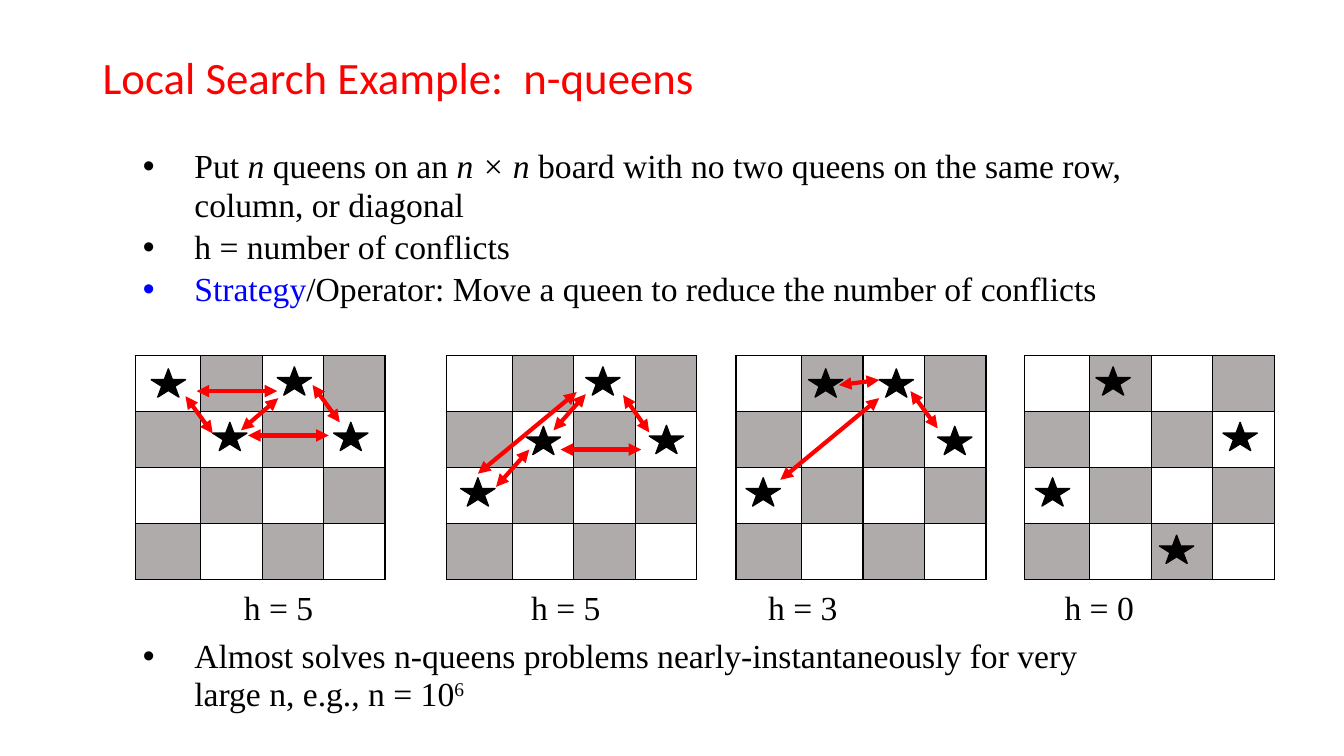
from dataclasses import dataclass

from lxml import etree
from pptx import Presentation
from pptx.dml.color import RGBColor
from pptx.enum.shapes import MSO_CONNECTOR, MSO_SHAPE
from pptx.enum.text import MSO_ANCHOR
from pptx.oxml.ns import qn
from pptx.util import Inches, Pt

STAR = MSO_SHAPE.STAR_5_POINT
LINE = MSO_CONNECTOR.STRAIGHT
MIDDLE = MSO_ANCHOR.MIDDLE


@dataclass(frozen=True)
class Theme:
    """Colours, fonts and sizes of the slide."""
    black: str = "000000"
    white: str = "FFFFFF"
    gray: str = "AFABAB"
    red: str = "FF0000"
    blue: str = "0000FF"
    head: str = "Calibri"
    body: str = "Times New Roman"
    big: int = 32
    text: int = 24
    thin: int = 1
    thick: int = 3


THEME = Theme()
TOP = [
    [("Put ", ""), ("n", "italic"), (" queens on an ", ""), ("n × n", "italic"),
     (" board with no two queens on the same row, column, or diagonal", "")],
    [("h = number of conflicts", "")],
    [("Strategy", "blue"),
     ("/Operator: Move a queen to reduce the number of conflicts", "")],
]
END = [[("Almost solves n-queens problems nearly-instantaneously "
         "for very large n, e.g., n = 10", ""), ("6", "super")]]
BOARDS = [
    (1.34, "h = 5", 1.08,
     [(.16, .13), (1.41, .11), (.77, .66), (1.97, .66)],
     [(1.05, .74, 1.42, .42), (1.12, .79, 1.92, .79), (.61, .35, 1.41, .35),
      (.5, .4, .77, .77), (1.76, .29, 2.03, .66)]),
    (4.43, "h = 5", .84,
     [(.14, 1.21), (.79, .7), (1.38, .11), (2.01, .69)],
     [(1.75, .39, 2.01, .76), (1.38, .38, 1.06, .74), (.82, .93, .49, 1.3),
      (.31, 1.17, 1.29, .36), (1.13, .93, 1.93, .93)]),
    (7.3, "h = 3", .32,
     [(.1, 1.21), (.72, .13), (1.42, .13), (2, .7)],
     [(1.73, .35, 2, .72), (1.02, .29, 1.42, .24), (.44, 1.23, 1.42, .42)]),
    (10.16, "h = 0", .4,
     [(.11, 1.21), (.71, .11), (1.34, 1.78), (1.97, .66)], []),
]


def rgb(code):
    """Turn a hex code into a colour."""
    return RGBColor.from_string(code)


def sub(node, tag, **attrs):
    """Add a drawing element below a node."""
    return etree.SubElement(node, qn("a:" + tag), attrs)


def style(para, face, size, color):
    """Set the font of a paragraph."""
    font = para.font
    font.name, font.size = face, Pt(size)
    font.color.rgb = rgb(color)


def frame(slide, x, y, w, h):
    """Add a wrapping text box and return its frame."""
    text = slide.shapes.add_textbox(
        Inches(x), Inches(y), Inches(w), Inches(h)).text_frame
    text.word_wrap = True
    return text


def title(slide, x, y, w, h):
    """Place the slide title."""
    text = frame(slide, x, y, w, h)
    text.vertical_anchor = MIDDLE
    para = text.paragraphs[0]
    para.text = "Local Search Example:  n-queens"
    para.line_spacing = .9
    style(para, THEME.head, THEME.big, THEME.red)


def bullets(slide, x, y, w, h, items):
    """Place a bulleted list of styled runs."""
    text = frame(slide, x, y, w, h)
    for i, item in enumerate(items):
        para = text.add_paragraph() if i else text.paragraphs[0]
        props = para._p.get_or_add_pPr()
        props.set("marL", str(Inches(.51)))
        props.set("indent", str(-Inches(.51)))
        mark = THEME.blue if item[0][1] == "blue" else THEME.black
        sub(sub(props, "buClr"), "srgbClr", val=mark)
        sub(props, "buFont", typeface="Arial")
        sub(props, "buChar", char="•")
        style(para, THEME.body, THEME.text, THEME.black)
        para.line_spacing = .95
        if i:
            para.space_before = Pt(2.7)
        for words, kind in item:
            run = para.add_run()
            run.text = words
            if kind == "italic":
                run.font.italic = True
            elif kind == "blue":
                run.font.color.rgb = rgb(THEME.blue)
            elif kind == "super":
                run._r.get_or_add_rPr().set("baseline", "30000")


def border(cell):
    """Draw a thin line on each side of a cell."""
    props = cell._tc.get_or_add_tcPr()
    for i, side in enumerate(("lnL", "lnR", "lnT", "lnB")):
        line = etree.Element(qn("a:" + side), {"w": str(Pt(THEME.thin))})
        sub(sub(line, "solidFill"), "srgbClr", val=THEME.black)
        props.insert(i, line)


def grid(slide, x, y, w, h):
    """Place an empty four by four board."""
    table = slide.shapes.add_table(
        4, 4, Inches(x), Inches(y), Inches(w), Inches(h)).table
    table.first_row = table.horz_banding = False
    for i, col in enumerate(table.columns):
        col.width = Inches(.61 if i else w - 3 * .61)
    for r in range(4):
        table.rows[r].height = Inches(h / 4)
        for c in range(4):
            cell = table.cell(r, c)
            cell.fill.solid()
            cell.fill.fore_color.rgb = rgb(
                THEME.gray if (r + c) % 2 else THEME.white)
            border(cell)


def queen(slide, x, y):
    """Place one queen."""
    star = slide.shapes.add_shape(
        STAR, Inches(x), Inches(y), Inches(.34), Inches(.28))
    star.shadow.inherit = False
    star.fill.solid()
    star.fill.fore_color.rgb = rgb(THEME.black)
    star.line.color.rgb = rgb(THEME.black)
    star.line.width = Pt(THEME.thin)


def arrow(slide, x1, y1, x2, y2):
    """Draw a two-headed conflict arrow."""
    link = slide.shapes.add_connector(
        LINE, Inches(x1), Inches(y1), Inches(x2), Inches(y2))
    link.line.color.rgb = rgb(THEME.red)
    link.line.width = Pt(THEME.thick)
    line = link.line._get_or_add_ln()
    for end in ("headEnd", "tailEnd"):
        sub(line, end, type="triangle")
    sub(link._element.spPr, "effectLst")


def board(slide, x, y, w, h, label, shift, queens, links):
    """Place a board with its queens, conflicts and label."""
    grid(slide, x, y, w, h)
    for dx, dy in queens:
        queen(slide, x + dx, y + dy)
    for x1, y1, x2, y2 in links:
        arrow(slide, x + x1, y + y1, x + x2, y + y2)
    text = frame(slide, x + shift - .1, y + h + .02, 1.2, .48)
    para = text.paragraphs[0]
    para.text = label
    style(para, THEME.body, THEME.text, THEME.black)


def main():
    """Build and save the slide."""
    deck = Presentation()
    deck.slide_width, deck.slide_height = Inches(13.33), Inches(7.5)
    slide = deck.slides.add_slide(deck.slide_layouts[6])
    title(slide, .92, .26, 7.23, 1.07)
    bullets(slide, 1.32, 1.42, 10.07, 1.75, TOP)
    for x, *parts in BOARDS:
        board(slide, x, 3.53, 2.48, 2.22, *parts)
    bullets(slide, 1.32, 6.28, 10.07, .88, END)
    deck.save("out.pptx")


if __name__ == "__main__":
    main()
